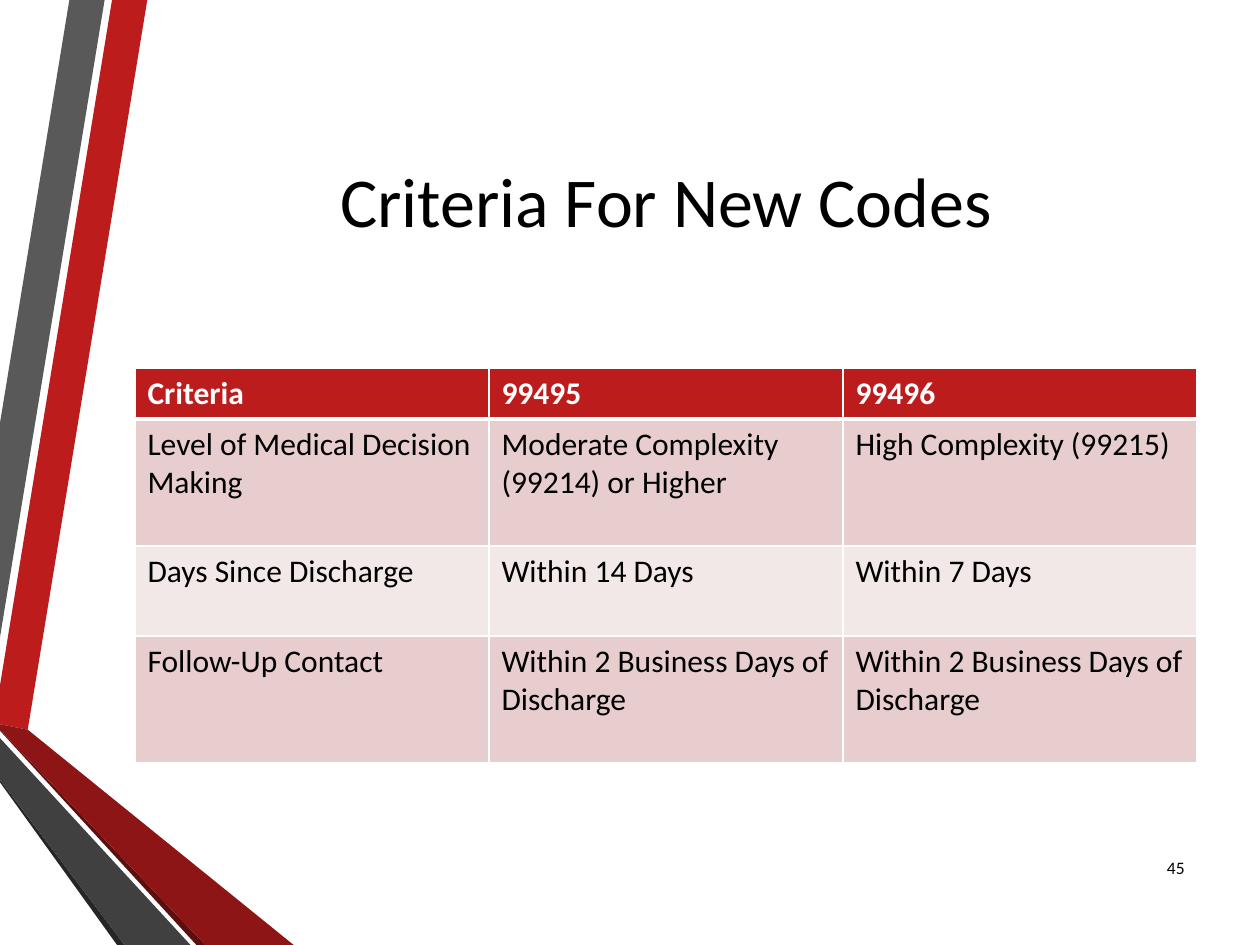
from lxml import etree
from pptx import Presentation
from pptx.dml.color import RGBColor
from pptx.enum.text import MSO_ANCHOR, PP_ALIGN
from pptx.oxml.ns import qn
from pptx.util import Cm, Pt

MIDDLE = MSO_ANCHOR.MIDDLE
CENTER, RIGHT = PP_ALIGN.CENTER, PP_ALIGN.RIGHT

FONT = "Calibri"
BLACK = RGBColor(0x00, 0x00, 0x00)
WHITE = RGBColor(0xFF, 0xFF, 0xFF)
RED = RGBColor(0xBC, 0x1C, 0x1C)
DARK_RED = RGBColor(0x8D, 0x15, 0x15)
DEEP_RED = RGBColor(0x5E, 0x0E, 0x0E)
GRAY = RGBColor(0x59, 0x59, 0x59)
DARK_GRAY = RGBColor(0x40, 0x40, 0x40)
DEEP_GRAY = RGBColor(0x26, 0x26, 0x26)
BAND_DARK = RGBColor(0xE7, 0xCD, 0xCD)
BAND_LIGHT = RGBColor(0xF3, 0xE8, 0xE8)

prs = Presentation()
prs.slide_width, prs.slide_height = Cm(25.4), Cm(19.05)
slide = prs.slides.add_slide(prs.slide_layouts[6])


def add_label(text, left, top, width, height, size, alignment):
    box = slide.shapes.add_textbox(Cm(left), Cm(top), Cm(width), Cm(height))
    frame = box.text_frame
    frame.word_wrap = True
    frame.vertical_anchor = MIDDLE
    paragraph = frame.paragraphs[0]
    paragraph.text = text
    paragraph.alignment = alignment
    paragraph.font.name = FONT
    paragraph.font.size = Pt(size)
    paragraph.font.color.rgb = BLACK


def add_cell_borders(cell, bottom_width):
    """Draw white borders; call before the fill, which must follow them in the XML."""
    properties = cell._tc.get_or_add_tcPr()
    for side, width in (("L", 1), ("R", 1), ("T", 1), ("B", bottom_width)):
        line = etree.SubElement(properties, qn(f"a:ln{side}"), w=str(Pt(width)))
        fill = etree.SubElement(line, qn("a:solidFill"))
        etree.SubElement(fill, qn("a:srgbClr"), val=str(WHITE))


# Folded ribbons along the left edge, outlines in centimetres
ribbons = [
    (RED, [(0, 13.82), (0, 14.6), (0.56, 14.71), (2.97, 0), (2.26, 0)]),
    (GRAY, [(2.11, 0), (1.4, 0), (0, 8.53), (0, 12.85)]),
    (DEEP_GRAY, [(0, 15.72), (0, 15.77), (2.36, 19.05), (2.51, 19.05)]),
    (DEEP_RED, [(0, 14.71), (0, 14.73), (3.96, 19.05), (4.14, 19.05)]),
    (DARK_RED, [(0, 14.71), (4.14, 19.05), (5.92, 19.05), (0.56, 14.71), (0, 14.6)]),
    (DARK_GRAY, [(0, 15.72), (2.51, 19.05), (3.84, 19.05), (0, 14.88)]),
]
for color, outline in ribbons:
    corners = [(Cm(x), Cm(y)) for x, y in outline]
    builder = slide.shapes.build_freeform(*corners[0])
    builder.add_line_segments(corners[1:], close=True)
    ribbon = builder.convert_to_shape()
    ribbon.shadow.inherit = False
    ribbon.fill.solid()
    ribbon.fill.fore_color.rgb = color
    ribbon.line.fill.background()

add_label("Criteria For New Codes", 2.72, 1.27, 21.41, 5.51, 40, CENTER)

# Criteria table
criteria = [
    ("Criteria", "99495", "99496"),
    ("Level of Medical Decision Making", "Moderate Complexity (99214) or Higher",
     "High Complexity (99215)"),
    ("Days Since Discharge", "Within 14 Days", "Within 7 Days"),
    ("Follow-Up Contact", "Within 2 Business Days of Discharge",
     "Within 2 Business Days of Discharge"),
]
row_heights = [1.03, 2.56, 1.81, 2.56]
row_fills = [RED, BAND_DARK, BAND_LIGHT, BAND_DARK]

table = slide.shapes.add_table(
    len(criteria), 3, Cm(2.72), Cm(7.42), Cm(21.41), Cm(sum(row_heights))
).table
for r, texts in enumerate(criteria):
    is_header = r == 0
    table.rows[r].height = Cm(row_heights[r])
    for c, text in enumerate(texts):
        cell = table.cell(r, c)
        add_cell_borders(cell, 3 if is_header else 1)
        cell.fill.solid()
        cell.fill.fore_color.rgb = row_fills[r]
        cell.text = text
        font = cell.text_frame.paragraphs[0].font
        font.name = FONT
        font.size = Pt(18)
        font.bold = is_header
        font.color.rgb = WHITE if is_header else BLACK

add_label("45", 22.94, 16.97, 1.19, 1.02, 10, RIGHT)

prs.save("out.pptx")
